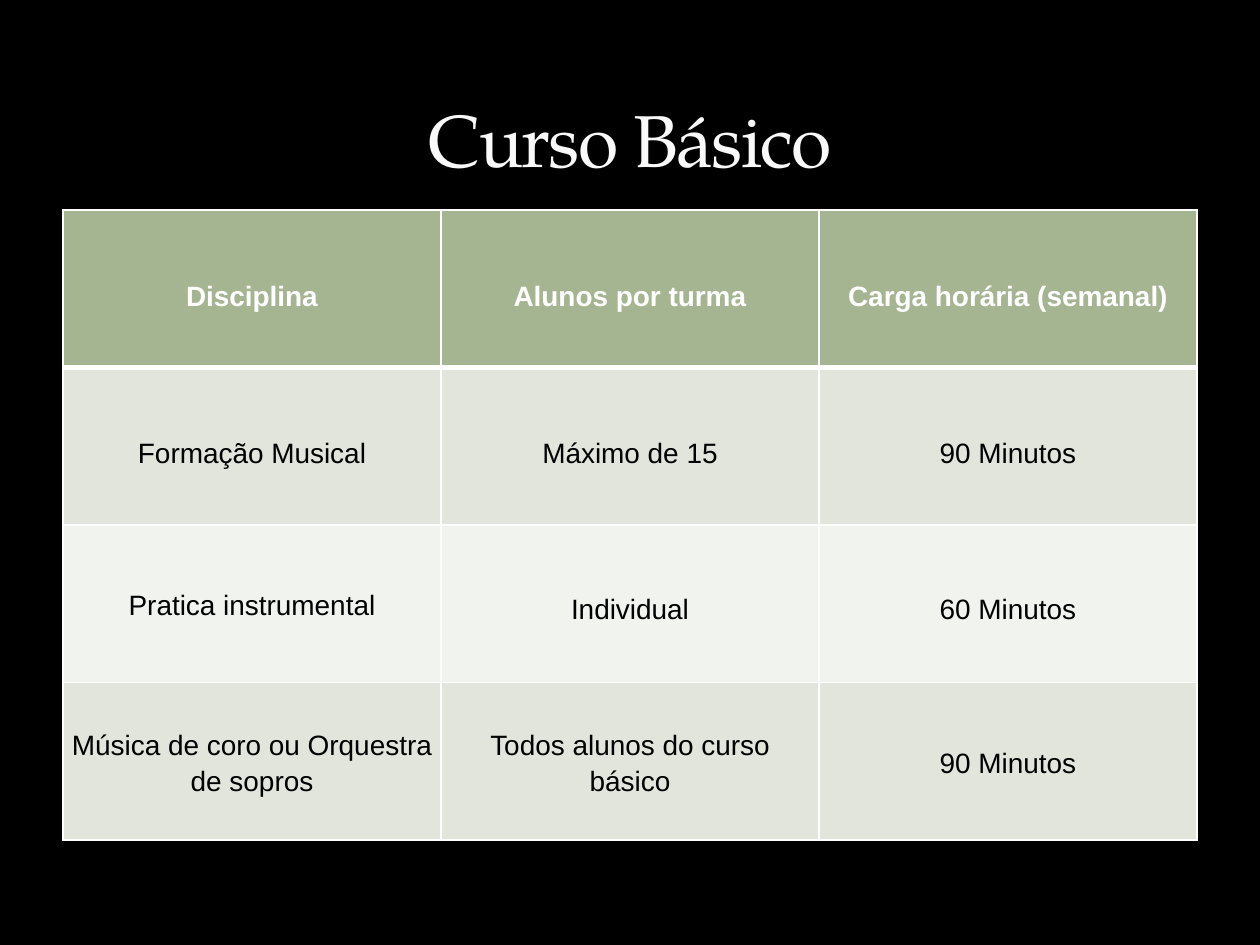
from lxml import etree
from pptx import Presentation
from pptx import util as u
from pptx.dml.color import RGBColor
from pptx.enum import text
from pptx.oxml.ns import qn

WHITE, BLACK = "FFFFFF", "000000"
HEADER_FILL, BAND_FILLS = "A5B592", ("E1E5DC", "F0F3EE")
ROWS = [
    ("Disciplina", "Alunos por turma", "Carga horária (semanal)"),
    ("Formação Musical", "Máximo de 15", "90 Minutos"),
    ("Pratica instrumental", "Individual", "60 Minutos"),
    ("Música de coro ou Orquestra de sopros", "Todos alunos do curso básico", "90 Minutos"),
]


def rgb(value):
    return RGBColor.from_string(value)


def write(tf, content, font="Arial", size=16, color=BLACK, bold=False,
          line=1.0, tracking=None):
    p = tf.paragraphs[0]
    p.alignment = text.PP_ALIGN.CENTER
    p.line_spacing = line
    r = p.add_run()
    r.text = content
    r.font.name, r.font.size, r.font.bold = font, u.Pt(size), bold
    r.font.color.rgb = rgb(color)
    if tracking is not None:
        r.font._element.set("spc", str(int(tracking * 100)))


def border(cell, side, width, color=WHITE):
    ln = etree.SubElement(cell._tc.get_or_add_tcPr(), qn(f"a:ln{side}"),
                          w=str(u.Pt(width)))
    fill = etree.SubElement(ln, qn("a:solidFill"))
    etree.SubElement(fill, qn("a:srgbClr"), val=color)


class Deck:
    """Holds the presentation, its style and the current slide."""

    def __init__(self, width=10, height=7.5):
        self.prs = Presentation()
        self.prs.slide_width, self.prs.slide_height = u.Inches(width), u.Inches(height)
        self.s = None

    def box(self, x, y, w, h):
        """Turn shares of the slide into lengths."""
        sw, sh = self.prs.slide_width, self.prs.slide_height
        return int(x * sw), int(y * sh), int(w * sw), int(h * sh)

    def slide(self, background):
        self.s = self.prs.slides.add_slide(self.prs.slide_layouts[5])
        self.s.background.fill.solid()
        self.s.background.fill.fore_color.rgb = rgb(background)

    def title(self, content, *area):
        sp = self.s.shapes.title
        sp.left, sp.top, sp.width, sp.height = self.box(*area)
        sp.text_frame.vertical_anchor = text.MSO_ANCHOR.BOTTOM
        write(sp.text_frame, content, font="TeX Gyre Pagella", size=42,
              color="F9F9F9", tracking=-1)

    def table(self, rows, *area):
        x, y, w, h = self.box(*area)
        table = self.s.shapes.add_table(len(rows), len(rows[0]), x, y, w, h).table
        for i, row in enumerate(rows):
            for j, content in enumerate(row):
                self.cell(table.cell(i, j), content, i, j)

    def cell(self, cell, content, row, col):
        header = row == 0
        cell.margin_left = cell.margin_right = u.Inches(0.07)
        # The values of the third row sit slightly below the middle
        cell.margin_top = u.Inches(0.06 if row == 2 and col > 0 else 0)
        cell.margin_bottom = 0
        cell.vertical_anchor = text.MSO_ANCHOR.MIDDLE
        # Thick rule between header and body
        for side in "LRTB":
            thick = (row, side) in ((0, "B"), (1, "T"))
            border(cell, side, 3 if thick else 1)
        cell.fill.solid()
        cell.fill.fore_color.rgb = rgb(HEADER_FILL if header else BAND_FILLS[(row - 1) % 2])
        write(cell.text_frame, content, color=WHITE if header else BLACK,
              bold=header, line=1.5 if row < 2 else 1.15)


def main():
    deck = Deck()
    deck.slide(BLACK)
    # Course table, then its title
    deck.table(ROWS, 0.05, 2 / 9, 0.9, 2 / 3)
    deck.title("Curso Básico", 0.05, 0.02, 0.9, 0.18)
    deck.prs.save("out.pptx")


if __name__ == "__main__":
    main()
